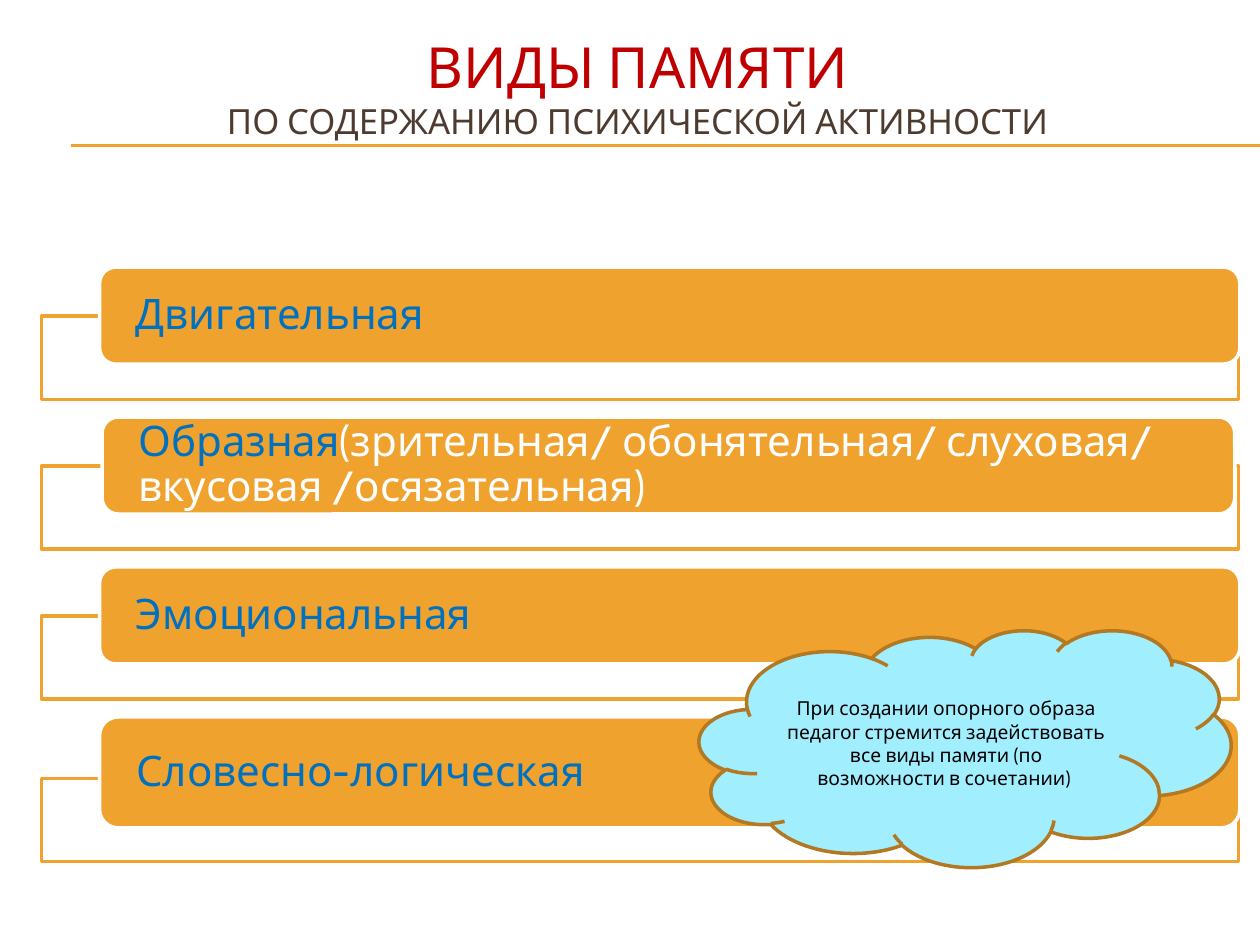
from dataclasses import dataclass

from lxml import etree
from pptx import Presentation
from pptx.dml.color import RGBColor
from pptx.enum.shapes import MSO_CONNECTOR, MSO_SHAPE as Preset
from pptx.enum.text import MSO_ANCHOR as Anchor, PP_ALIGN as Align
from pptx.oxml.ns import qn
from pptx.shapes.autoshape import Shape
from pptx.slide import Slide
from pptx.text.text import Font
from pptx.util import Pt

FONT = "Cabin"
ORANGE, WHITE, BLUE = "F0A22E", "FFFFFF", "0070C0"
RED, BROWN, BLACK = "C00000", "4E3B30", "000000"
CLOUD_FILL, CLOUD_EDGE = "A0EEFE", "B27822"

FIRST_TOP, ROW_PITCH = 152.64, 85.68
FRAME_LEFT, FRAME_WIDTH, FRAME_HEIGHT = 23.76, 684, 47.52


@dataclass(frozen=True)
class MemoryKind:
    name: str
    details: str = ""
    left: float = 56.88
    width: float = 651.6
    height: float = 55.44
    frame_drop: float = 28.08


KINDS = (
    MemoryKind("Двигательная"),
    MemoryKind(
        "Образная",
        "(зрительная/ обонятельная/ слуховая/ вкусовая /осязательная)",
        left=58.32,
        width=647.28,
    ),
    MemoryKind("Эмоциональная"),
    MemoryKind("Словесно-логическая", height=63.36, frame_drop=35.28),
)


def rgb(color: str) -> RGBColor:
    return RGBColor.from_string(color)


def style_font(font: Font, size: float, color: str) -> None:
    font.name = FONT
    font.size = Pt(size)
    font.color.rgb = rgb(color)


def add_box(slide: Slide, preset: Preset, left: float, top: float, width: float,
            height: float, fill: str, edge: str) -> Shape:
    box = slide.shapes.add_shape(preset, Pt(left), Pt(top), Pt(width), Pt(height))
    box.shadow.inherit = False
    box.fill.solid()
    box.fill.fore_color.rgb = rgb(fill)
    box.line.color.rgb = rgb(edge)
    box.line.width = Pt(2)
    box.text_frame.word_wrap = True
    box.text_frame.vertical_anchor = Anchor.MIDDLE
    return box


def set_opacity(box: Shape, percent: int) -> None:
    color = box._element.spPr.find(qn("a:solidFill")).find(qn("a:srgbClr"))
    etree.SubElement(color, qn("a:alpha"), val=str(percent * 1000))


def add_rule(slide: Slide, y: float) -> None:
    rule = slide.shapes.add_connector(
        MSO_CONNECTOR.STRAIGHT, Pt(40.32), Pt(y), Pt(720), Pt(y))
    rule.line.color.rgb = rgb(ORANGE)
    rule.line.width = Pt(0.75)
    etree.SubElement(rule._element.spPr, qn("a:effectLst"))


def add_title(slide: Slide) -> None:
    heading = slide.shapes.add_textbox(Pt(22.32), Pt(16.56), Pt(684), Pt(66.24))
    frame = heading.text_frame
    frame.word_wrap = True
    frame.vertical_anchor = Anchor.MIDDLE
    lines = (
        ("ВИДЫ ПАМЯТИ", 32.4, RED),
        ("ПО СОДЕРЖАНИЮ ПСИХИЧЕСКОЙ АКТИВНОСТИ", 19.8, BROWN),
    )
    for index, (wording, size, color) in enumerate(lines):
        paragraph = frame.add_paragraph() if index else frame.paragraphs[0]
        paragraph.text = wording
        paragraph.alignment = Align.CENTER
        style_font(paragraph.font, size, color)


def add_kind(slide: Slide, kind: MemoryKind, top: float) -> None:
    """Draw the outlined frame and the rounded label overlapping its top."""
    outline = add_box(slide, Preset.RECTANGLE, FRAME_LEFT, top + kind.frame_drop,
                      FRAME_WIDTH, FRAME_HEIGHT, WHITE, ORANGE)
    set_opacity(outline, 90)
    label = add_box(slide, Preset.ROUNDED_RECTANGLE, kind.left, top,
                    kind.width, kind.height, ORANGE, WHITE)
    frame = label.text_frame
    frame.margin_left = frame.margin_right = Pt(18)
    frame.margin_top = frame.margin_bottom = Pt(0)
    paragraph = frame.paragraphs[0]
    paragraph.alignment = Align.LEFT
    paragraph.line_spacing = 0.9
    for wording, color in ((kind.name, BLUE), (kind.details, WHITE)):
        if wording:
            run = paragraph.add_run()
            run.text = wording
            style_font(run.font, 24, color)


def add_advice(slide: Slide) -> None:
    cloud = add_box(slide, Preset.CLOUD, 399.6, 360, 303.84, 135.36,
                    CLOUD_FILL, CLOUD_EDGE)
    paragraph = cloud.text_frame.paragraphs[0]
    paragraph.text = ("При создании опорного образа педагог стремится задействовать "
                      "все виды памяти (по возможности в сочетании) ")
    paragraph.alignment = Align.CENTER
    style_font(paragraph.font, 11, BLACK)


def main() -> None:
    deck = Presentation()
    deck.slide_width, deck.slide_height = Pt(720), Pt(540)
    slide = deck.slides.add_slide(deck.slide_layouts[6])
    for y in (82.8, 83.52):
        add_rule(slide, y)
    add_title(slide)
    for row, kind in enumerate(KINDS):
        add_kind(slide, kind, FIRST_TOP + row * ROW_PITCH)
    add_advice(slide)
    deck.save("out.pptx")


if __name__ == "__main__":
    main()
